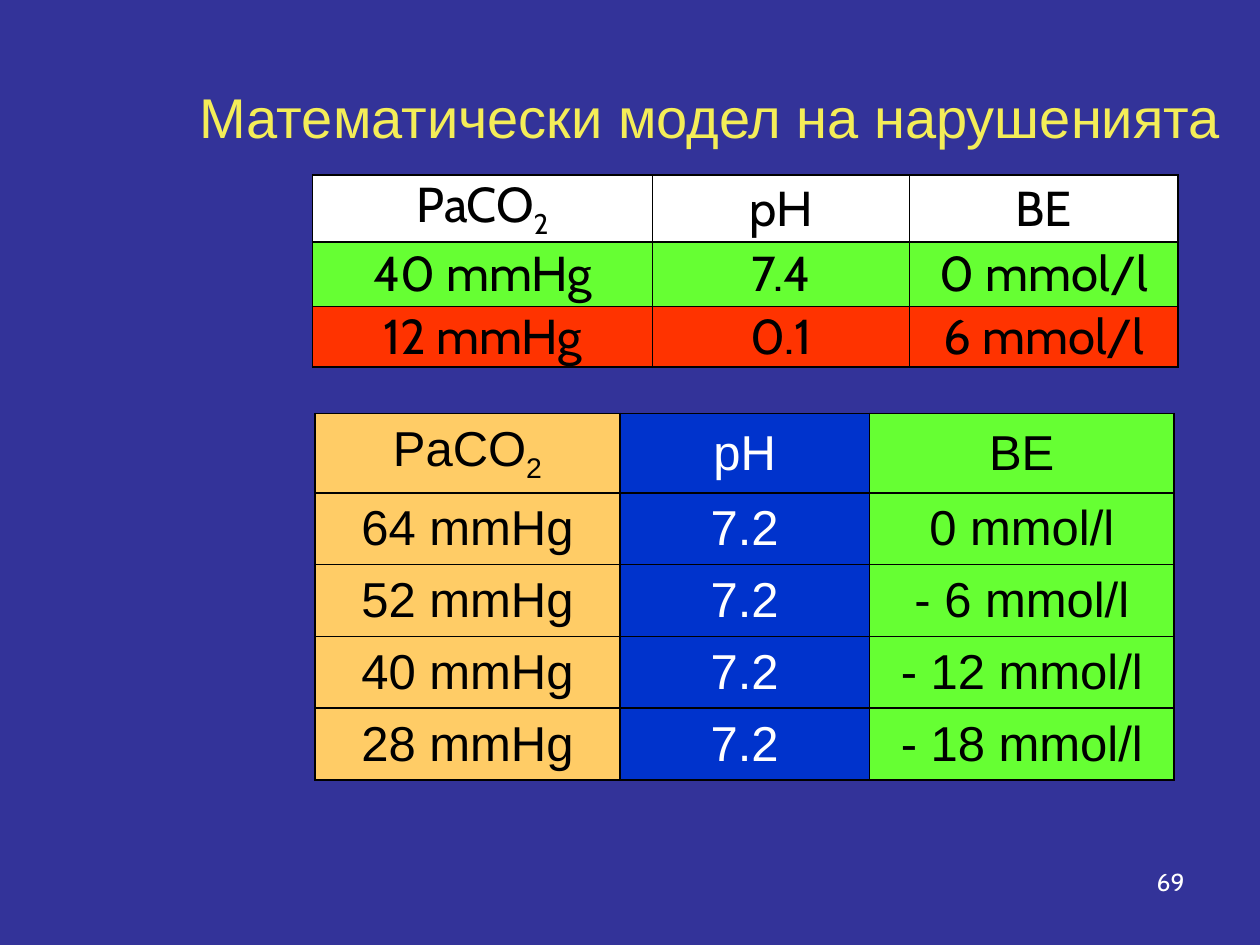
from lxml import etree
from pptx import Presentation
from pptx.dml.color import RGBColor
from pptx.enum import text
from pptx.oxml import ns
from pptx.util import Inches, Pt

NAVY = RGBColor(0x33, 0x33, 0x99)
YELLOW = RGBColor(0xF4, 0xED, 0x58)
WHITE = RGBColor(0xFF, 0xFF, 0xFF)
BLACK = RGBColor(0x00, 0x00, 0x00)
GREEN = RGBColor(0x66, 0xFF, 0x33)
RED = RGBColor(0xFF, 0x33, 0x00)
ORANGE = RGBColor(0xFF, 0xCC, 0x66)
BLUE = RGBColor(0x00, 0x33, 0xCC)

HEADINGS = ("PaCO2", "pH", "BE")
UNIT_ROWS = [HEADINGS, ("40 mmHg", "7.4", "0 mmol/l"), ("12 mmHg", "0.1", "6 mmol/l")]
MODEL_ROWS = [
    HEADINGS,
    ("64 mmHg", "7.2", "0 mmol/l"),
    ("52 mmHg", "7.2", "- 6 mmol/l"),
    ("40 mmHg", "7.2", "- 12 mmol/l"),
    ("28 mmHg", "7.2", "- 18 mmol/l"),
]


def style_para(para, font_name, size, color, align):
    """Set the font and alignment of a whole paragraph."""
    para.alignment = align
    para.font.name = font_name
    para.font.size = Pt(size)
    para.font.color.rgb = color


def add_borders(cell):
    """Draw a thin black line on each side of a cell."""
    properties = cell._tc.get_or_add_tcPr()
    for side in ("a:lnL", "a:lnR", "a:lnT", "a:lnB"):
        line = etree.SubElement(properties, ns.qn(side), w=str(Pt(1)))
        fill = etree.SubElement(line, ns.qn("a:solidFill"))
        etree.SubElement(fill, ns.qn("a:srgbClr"), val=str(BLACK))


def fill_cell(cell, words, font_name, fill_color, margins):
    """Write one centred cell, lowering the 2 of PaCO2."""
    add_borders(cell)
    cell.fill.solid()
    cell.fill.fore_color.rgb = fill_color
    cell.vertical_anchor = text.MSO_ANCHOR.MIDDLE
    cell.margin_left = cell.margin_right = Inches(margins[0])
    cell.margin_top = cell.margin_bottom = Inches(margins[1])
    para = cell.text_frame.paragraphs[0]
    color = WHITE if fill_color == BLUE else BLACK
    style_para(para, font_name, 28, color, text.PP_ALIGN.CENTER)
    if words == "PaCO2":
        para.add_run().text = words[:-1]
        span = para.add_run()
        span.text = words[-1]
        span._r.get_or_add_rPr().set("baseline", "-25000")
    else:
        para.add_run().text = words


def add_value_table(page, left, top, widths, heights, rows, font_name, color_at, margins):
    """Place a table whose cell colours come from color_at(row, column)."""
    frame = page.shapes.add_table(
        len(rows), len(widths), Inches(left), Inches(top),
        Inches(sum(widths)), Inches(sum(heights)))
    table = frame.table
    table.first_row = table.horz_banding = False
    for column, width in zip(table.columns, widths):
        column.width = Inches(width)
    for row, height in zip(table.rows, heights):
        row.height = Inches(height)
    for r, row in enumerate(rows):
        for c, words in enumerate(row):
            fill_cell(table.cell(r, c), words, font_name, color_at(r, c), margins)


def add_title(page, left, top, width, height):
    """Move and format the title placeholder."""
    title = page.shapes.title
    title.left, title.top = Inches(left), Inches(top)
    title.width, title.height = Inches(width), Inches(height)
    frame = title.text_frame
    frame.text = "Математически модел на нарушенията"
    frame.vertical_anchor = text.MSO_ANCHOR.MIDDLE
    style_para(frame.paragraphs[0], "Arial", 32, YELLOW, text.PP_ALIGN.RIGHT)


def add_page_number(page, left, top, width, height):
    """Write the page number in the bottom corner."""
    box = page.shapes.add_textbox(Inches(left), Inches(top), Inches(width), Inches(height))
    frame = box.text_frame
    frame.word_wrap = True
    frame.text = "69"
    style_para(frame.paragraphs[0], "Cabin", 14, WHITE, text.PP_ALIGN.RIGHT)


def main():
    """Build the slide and save it."""
    deck = Presentation()
    deck.slide_width, deck.slide_height = Inches(10), Inches(7.5)
    page = deck.slides.add_slide(deck.slide_layouts[5])
    page.background.fill.solid()
    page.background.fill.fore_color.rgb = NAVY
    add_page_number(page, 7.17, 6.83, 2.33, 0.52)
    add_title(page, 0.5, 0.3, 9.29, 1.25)
    add_value_table(
        page, 2.48, 1.39, (2.7, 2.04, 2.13), (0.51, 0.51, 0.48), UNIT_ROWS, "Cabin",
        lambda row, column: (WHITE, GREEN, RED)[row], (0, 0))
    add_value_table(
        page, 2.5, 3.28, (2.42, 1.98, 2.42), [0.57] * len(MODEL_ROWS), MODEL_ROWS, "Arial",
        lambda row, column: (ORANGE, BLUE, GREEN)[column], (0.1, 0.05))
    deck.save("out.pptx")


if __name__ == "__main__":
    main()
